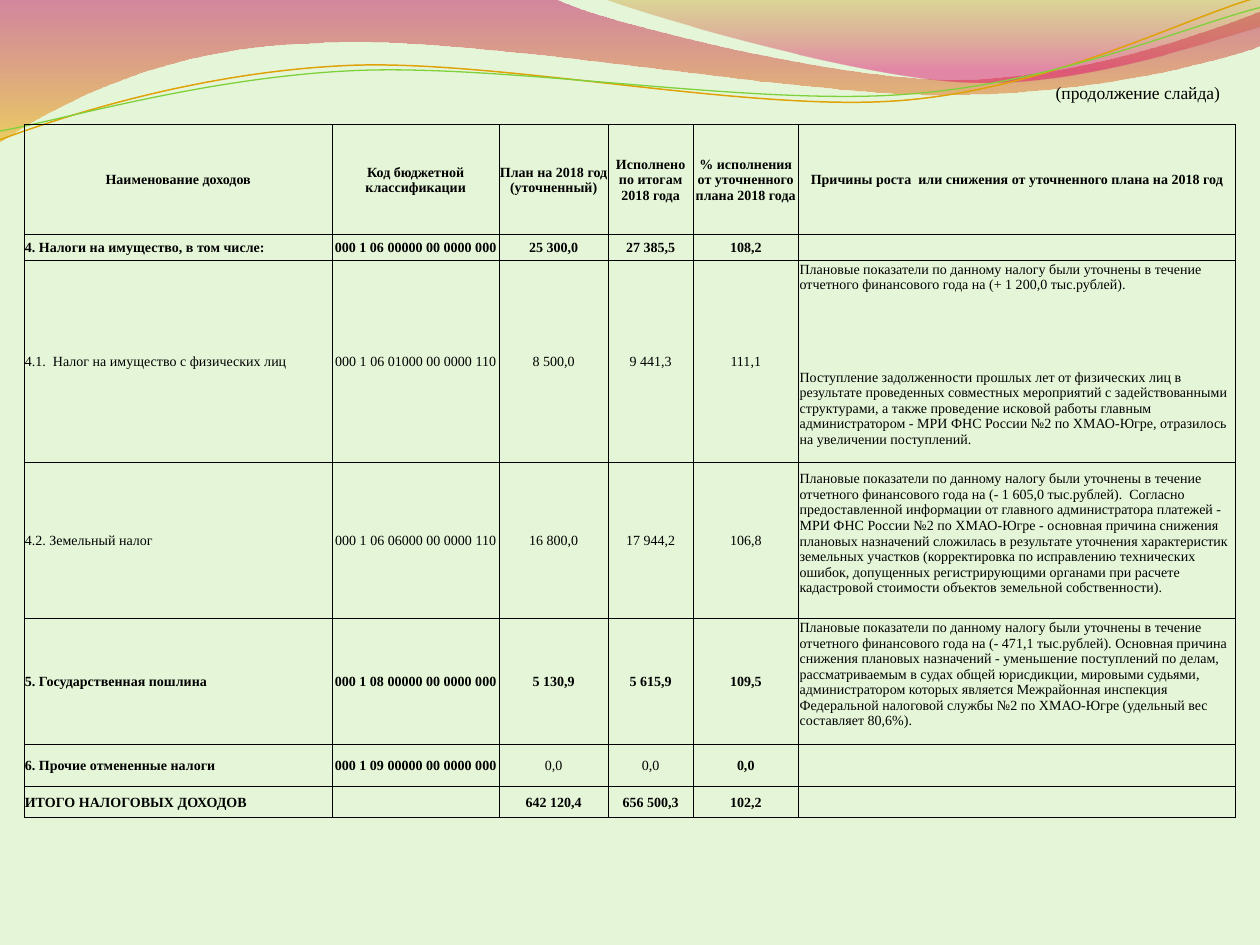
from lxml import etree
from pptx import Presentation
from pptx.dml.color import RGBColor
from pptx.enum.text import MSO_ANCHOR, PP_ALIGN
from pptx.oxml import parse_xml
from pptx.oxml.ns import nsdecls, qn
from pptx.util import Inches, Pt

CENTER, LEFT = PP_ALIGN.CENTER, PP_ALIGN.LEFT
MIDDLE = MSO_ANCHOR.MIDDLE

FONT = "Times New Roman"
BLACK = RGBColor(0x00, 0x00, 0x00)
PALE_GREEN = RGBColor(0xE5, 0xF6, 0xD8)
PINK = RGBColor(0xBD, 0x00, 0x59)
AMBER = RGBColor(0xF0, 0xAB, 0x00)
OLIVE = RGBColor(0xC3, 0x8B, 0x00)
MAGENTA = RGBColor(0xE1, 0x00, 0x6B)
ORANGE = RGBColor(0xE0, 0xA2, 0x09)
GREEN = RGBColor(0x7F, 0xD1, 0x3B)

# Each wave is a start point followed by line ends (2 numbers) or Bézier curves (6)
LEFT_WAVE = [
    (0, 0), (4.4, -0.01),
    (4.76, 0.17, 6.64, 0.63, 7.58, 0.63), (8.53, 0.63, 9.58, 0.26, 10, 0.09),
    (10.01, 0.36),
    (9.83, 0.44, 8.7, 0.76, 7.46, 0.75), (6.22, 0.75, 3.82, 0.28, 2.57, 0.34),
    (1.29, 0.36, 0.46, 0.83, -0.01, 1.13),
]
RIGHT_WAVE = [
    (4.79, -0.01),
    (5.09, 0.11, 6.82, 0.62, 7.69, 0.65), (8.56, 0.69, 9.61, 0.32, 10, 0.21),
    (10, 0),
]
ORANGE_STRAND = [
    (0, 1.11),
    (0.48, 0.93, 1.58, 0.57, 2.77, 0.52), (3.95, 0.47, 5.93, 0.89, 7.13, 0.8),
    (8.33, 0.71, 9.38, 0.15, 9.98, -0.02),
]
GREEN_STRAND = [
    (0, 1.04),
    (0.47, 0.96, 1.64, 0.61, 2.83, 0.56), (4.03, 0.51, 5.97, 0.84, 7.17, 0.75),
    (8.36, 0.67, 9.41, 0.21, 10, 0.06),
]

COLUMN_WIDTHS = [2.45, 1.32, 0.87, 0.67, 0.84, 3.47]
REASONS_COLUMN = 5
ALL_BOLD, NONE_BOLD = range(6), ()

# Row height, bold columns, cell texts; a line break starts a new paragraph
INCOME_ROWS = [
    (0.87, ALL_BOLD, [
        "Наименование доходов", "Код бюджетной классификации",
        "План на 2018 год (уточненный)", "Исполнено по итогам 2018 года",
        "% исполнения от уточненного плана 2018 года",
        "Причины роста  или снижения от уточненного плана на 2018 год"]),
    (0.21, ALL_BOLD, [
        "4. Налоги на имущество, в том числе:", "000 1 06 00000 00 0000 000",
        "25 300,0", "27 385,5", "108,2", ""]),
    (1.6, NONE_BOLD, [
        "4.1.  Налог на имущество c физических лиц", "000 1 06 01000 00 0000 110",
        "8 500,0", "9 441,3", "111,1",
        "Плановые показатели по данному налогу были уточнены в течение отчетного "
        "финансового года на (+ 1 200,0 тыс.рублей).\n"
        "Поступление задолженности прошлых лет от физических лиц в результате "
        "проведенных совместных мероприятий с задействованными структурами, а также "
        "проведение исковой работы главным администратором - МРИ ФНС России №2 по "
        "ХМАО-Югре, отразилось на увеличении поступлений."]),
    (1.24, NONE_BOLD, [
        "4.2. Земельный налог", "000 1 06 06000 00 0000 110",
        "16 800,0", "17 944,2", "106,8",
        "Плановые показатели по данному налогу были уточнены в течение отчетного "
        "финансового года на (- 1 605,0 тыс.рублей).  Согласно предоставленной "
        "информации от главного администратора платежей - МРИ ФНС России №2 по "
        "ХМАО-Югре - основная причина снижения плановых назначений сложилась в "
        "результате уточнения характеристик земельных участков (корректировка по "
        "исправлению технических ошибок, допущенных регистрирующими органами при "
        "расчете кадастровой стоимости объектов земельной собственности)."]),
    (1, range(5), [
        "5. Государственная пошлина", "000 1 08 00000 00 0000 000",
        "5 130,9", "5 615,9", "109,5",
        "Плановые показатели по данному налогу были уточнены в течение отчетного "
        "финансового года на (- 471,1 тыс.рублей). Основная причина снижения плановых "
        "назначений - уменьшение поступлений по делам, рассматриваемым в судах общей "
        "юрисдикции, мировыми судьями, администратором которых является Межрайонная "
        "инспекция Федеральной налоговой службы №2 по ХМАО-Югре (удельный вес "
        "составляет 80,6%)."]),
    (0.33, (0, 1, 4), [
        "6. Прочие отмененные налоги", "000 1 09 00000 00 0000 000",
        "0,0", "0,0", "0,0", ""]),
    (0.25, ALL_BOLD, [
        "ИТОГО НАЛОГОВЫХ ДОХОДОВ", "", "642 120,4", "656 500,3", "102,2", ""]),
]


def add_wave(slide, left, top, segments, closed):
    points = [(Inches(left + segment[i]), Inches(top + segment[i + 1]))
              for segment in segments for i in range(0, len(segment), 2)]
    builder = slide.shapes.build_freeform(*points[0])
    builder.add_line_segments(points[1:], close=closed)
    wave = builder.convert_to_shape()
    wave.shadow.inherit = False
    # Join each three line ends that belong to one curve
    lines = iter(list(wave._element.iter(qn("a:lnTo"))))
    for segment in segments[1:]:
        first = next(lines)
        if len(segment) == 6:
            first.tag = qn("a:cubicBezTo")
            for line in (next(lines), next(lines)):
                first.append(line[0])
                line.getparent().remove(line)
    return wave


def fill_downward(shape, stops):
    """Vertical gradient; each stop is position %, colour, opacity %."""
    stop_xml = "".join(
        f'<a:gs pos="{position * 1000}"><a:srgbClr val="{color}">'
        f'<a:alpha val="{opacity * 1000}"/></a:srgbClr></a:gs>'
        for position, color, opacity in stops)
    gradient = parse_xml(
        f'<a:gradFill {nsdecls("a")} rotWithShape="1"><a:gsLst>{stop_xml}</a:gsLst>'
        '<a:lin ang="5400000" scaled="0"/></a:gradFill>')
    shape._element.spPr.find(qn("a:custGeom")).addnext(gradient)


def add_wave_header(slide, left, top):
    # Translucent bands
    for segments, stops in (
            (LEFT_WAVE, [(0, PINK, 45), (100, AMBER, 55)]),
            (RIGHT_WAVE, [(0, OLIVE, 30), (80, MAGENTA, 45)])):
        band = add_wave(slide, left, top, segments, closed=True)
        fill_downward(band, stops)
        band.line.fill.background()
    # Thin strands
    for segments, color, width in (
            (ORANGE_STRAND, ORANGE, 0.85), (GREEN_STRAND, GREEN, 0.75)):
        strand = add_wave(slide, left, top, segments, closed=False)
        strand.fill.background()
        strand.line.color.rgb = color
        strand.line.width = Pt(width)


def format_paragraph(paragraph, size, align, bold=False):
    paragraph.alignment = align
    paragraph.font.name = FONT
    paragraph.font.size = Pt(size)
    paragraph.font.bold = bold
    paragraph.font.color.rgb = BLACK


def add_borders(cell):
    properties = cell._tc.get_or_add_tcPr()
    for side in ("lnL", "lnR", "lnT", "lnB"):
        border = etree.SubElement(properties, qn(f"a:{side}"), w=str(Pt(0.5)))
        paint = etree.SubElement(border, qn("a:solidFill"))
        etree.SubElement(paint, qn("a:srgbClr"), val=str(BLACK))


def fill_cell(cell, text, align, bold, long_text):
    add_borders(cell)
    cell.fill.background()
    cell.vertical_anchor = MIDDLE
    cell.margin_left = cell.margin_right = cell.margin_top = Pt(0.5)
    cell.margin_bottom = Inches(0.12 if long_text else 0)
    cell.text = text
    for index, paragraph in enumerate(cell.text_frame.paragraphs):
        format_paragraph(paragraph, 8, align, bold)
        if index:
            paragraph.space_before = Pt(44)


def add_income_table(slide, left, top, width, height):
    table = slide.shapes.add_table(
        len(INCOME_ROWS), len(COLUMN_WIDTHS),
        Inches(left), Inches(top), Inches(width), Inches(height)).table
    table.first_row = table.horz_banding = False
    for column, column_width in zip(table.columns, COLUMN_WIDTHS):
        column.width = Inches(column_width)
    for r, (row_height, bold_columns, texts) in enumerate(INCOME_ROWS):
        table.rows[r].height = Inches(row_height)
        for c, text in enumerate(texts):
            is_body = r > 0
            align = LEFT if is_body and c in (0, REASONS_COLUMN) else CENTER
            long_text = is_body and c == REASONS_COLUMN and text != ""
            fill_cell(table.cell(r, c), text, align, c in bold_columns, long_text)


def add_continuation_note(slide, left, top, width, height):
    note = slide.shapes.add_textbox(
        Inches(left), Inches(top), Inches(width), Inches(height)).text_frame
    note.word_wrap = True
    note.text = "(продолжение слайда)"
    paragraph = note.paragraphs[0]
    format_paragraph(paragraph, 10, CENTER)
    paragraph._p.get_or_add_pPr().set("indent", str(Inches(0.49)))


def main():
    deck = Presentation()
    deck.slide_width, deck.slide_height = Inches(10), Inches(7.5)
    slide = deck.slides.add_slide(deck.slide_layouts[6])
    slide.background.fill.solid()
    slide.background.fill.fore_color.rgb = PALE_GREEN

    add_wave_header(slide, 0, 0)
    add_income_table(slide, 0.19, 0.99, sum(COLUMN_WIDTHS),
                     sum(row[0] for row in INCOME_ROWS))
    add_continuation_note(slide, 7.76, 0.6, 2.05, 0.27)
    deck.save("out.pptx")


if __name__ == "__main__":
    main()
